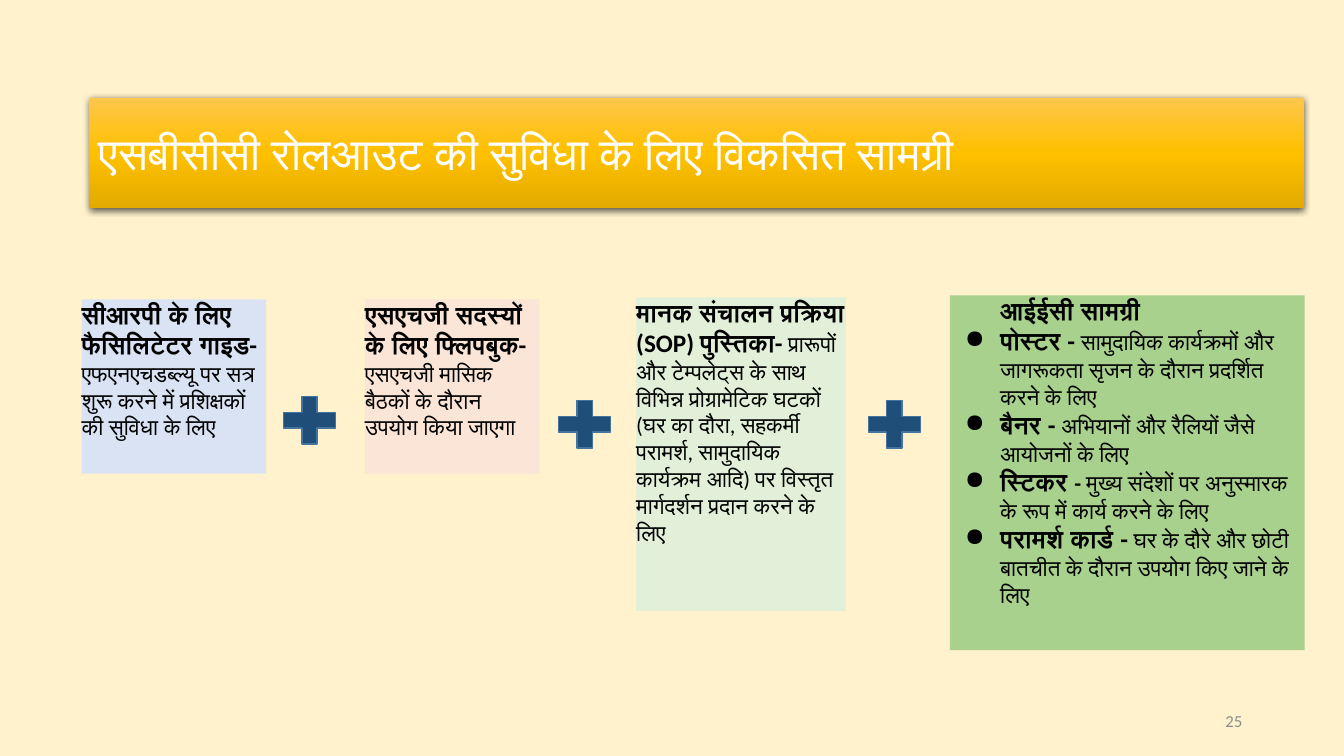
import copy
from dataclasses import dataclass

import lxml.etree
import pptx
import pptx.dml.color
import pptx.enum.shapes
import pptx.enum.text
import pptx.oxml.ns
import pptx.util

Inches = pptx.util.Inches
Pt = pptx.util.Pt
qn = pptx.oxml.ns.qn
MSO_SHAPE = pptx.enum.shapes.MSO_SHAPE
MSO_ANCHOR = pptx.enum.text.MSO_ANCHOR
PP_ALIGN = pptx.enum.text.PP_ALIGN

COLORS = {
    "background": "FFF2CC",
    "black": "000000",
    "white": "FFFFFF",
    "page_number": "8C8C8C",
    "guide": "DAE3F3",
    "flipbook": "FBE5D6",
    "sop": "E2F0D9",
    "iec": "A9D18E",
    "plus": "1F4E79",
    "plus_line": "43739E",
}
BANNER_STOPS = [(0, "FFC64B"), (0.5, "FFC000"), (1, "E3AB00")]


@dataclass
class Item:
    """A bold lead, an optional smaller bold mark, and the plain wording."""
    lead: str
    body: str = ""
    mark: str = ""
    indent: float = 0
    bullet: bool = False


@dataclass
class Card:
    left: float
    top: float
    width: float
    height: float
    color: str
    items: list[Item]


@dataclass
class Plus:
    left: float
    top: float


CARDS = [
    Card(0.81, 2.97, 1.83, 1.73, "guide", [
        Item("सीआरपी के लिए फैसिलिटेटर गाइड- ",
             "एफएनएचडब्ल्यू पर सत्र शुरू करने में प्रशिक्षकों की सुविधा के लिए"),
    ]),
    Card(3.62, 2.97, 1.73, 1.73, "flipbook", [
        Item("एसएचजी सदस्यों के लिए फ्लिपबुक- ",
             "एसएचजी मासिक बैठकों के दौरान उपयोग किया जाएगा"),
    ]),
    Card(6.31, 2.95, 2.08, 3.11, "sop", [
        Item("मानक संचालन प्रक्रिया (SOP) पुस्तिका- ",
             "प्रारूपों और टेम्पलेट्स के साथ विभिन्न प्रोग्रामेटिक घटकों "
             "(घर का दौरा, सहकर्मी परामर्श, सामुदायिक कार्यक्रम आदि) "
             "पर विस्तृत मार्गदर्शन प्रदान करने के लिए"),
    ]),
    Card(9.42, 2.93, 3.52, 3.52, "iec", [
        Item("आईईसी सामग्री", indent=0.5),
        Item("पोस्टर - ",
             "सामुदायिक कार्यक्रमों और जागरूकता सृजन के दौरान प्रदर्शित करने के लिए",
             indent=0.5, bullet=True),
        Item("बैनर - ", "अभियानों और रैलियों जैसे आयोजनों के लिए",
             indent=0.5, bullet=True),
        Item("स्टिकर ", "मुख्य संदेशों पर अनुस्मारक के रूप में कार्य करने के लिए",
             mark="- ", indent=0.5, bullet=True),
        Item("परामर्श कार्ड - ",
             "घर के दौरे और छोटी बातचीत के दौरान उपयोग किए जाने के लिए",
             indent=0.5, bullet=True),
    ]),
]
PLUSES = [Plus(2.72, 3.85), Plus(5.45, 3.89), Plus(8.52, 3.89)]


def rgb(value: str) -> pptx.dml.color.RGBColor:
    return pptx.dml.color.RGBColor.from_string(value)


def add_run(p, text: str, *, size: float, color: str = "black", bold: bool = False) -> None:
    r = p.add_run()
    r.text = text
    r.font.name = "Calibri"
    r.font.size = Pt(size)
    r.font.bold = bold
    r.font.color.rgb = rgb(COLORS[color])


def add_shape(s, kind, left: float, top: float, width: float, height: float):
    """Add a preset shape without line or shadow."""
    sp = s.shapes.add_shape(kind, Inches(left), Inches(top), Inches(width), Inches(height))
    sp.shadow.inherit = False
    sp.line.fill.background()
    return sp


def set_indent(p, item: Item) -> None:
    p_pr = p._p.get_or_add_pPr()
    p_pr.set("marL", str(Inches(item.indent)))
    p_pr.set("indent", str(Inches(-0.35 if item.bullet else 0)))
    if item.bullet:
        lxml.etree.SubElement(p_pr, qn("a:buChar")).set("char", "●")


def add_card(s, card: Card) -> None:
    sp = add_shape(s, MSO_SHAPE.RECTANGLE, card.left, card.top, card.width, card.height)
    sp.fill.solid()
    sp.fill.fore_color.rgb = rgb(COLORS[card.color])
    tf = sp.text_frame
    tf.word_wrap = True
    tf.vertical_anchor = MSO_ANCHOR.TOP
    tf.margin_left = tf.margin_right = tf.margin_top = 0
    tf.margin_bottom = Inches(0.05)
    for i, item in enumerate(card.items):
        p = tf.add_paragraph() if i else tf.paragraphs[0]
        p.alignment = PP_ALIGN.LEFT
        set_indent(p, item)
        add_run(p, item.lead, size=18, bold=True)
        if item.mark:
            add_run(p, item.mark, size=16, bold=True)
        if item.body:
            add_run(p, item.body, size=16)


def add_plus(s, plus: Plus) -> None:
    sp = add_shape(s, MSO_SHAPE.MATH_PLUS, plus.left, plus.top, 0.7, 0.64)
    sp.fill.solid()
    sp.fill.fore_color.rgb = rgb(COLORS["plus"])
    sp.line.color.rgb = rgb(COLORS["plus_line"])
    sp.line.width = Pt(1)


def add_drop_shadow(sp) -> None:
    effects = sp._element.spPr.find(qn("a:effectLst"))
    shadow = lxml.etree.SubElement(effects, qn("a:outerShdw"))
    for name, value in {"blurRad": Pt(4.5), "dist": Pt(1.5), "dir": 5400000,
                        "algn": "ctr", "rotWithShape": 0}.items():
        shadow.set(name, str(value))
    color = lxml.etree.SubElement(shadow, qn("a:srgbClr"))
    color.set("val", COLORS["black"])
    lxml.etree.SubElement(color, qn("a:alpha")).set("val", "63000")


def add_banner(s, title: str) -> None:
    sp = add_shape(s, MSO_SHAPE.RECTANGLE, 0.88, 0.97, 12.05, 1.09)
    sp.fill.gradient()
    sp.fill.gradient_angle = 270
    stops = sp._element.spPr.find(qn("a:gradFill")).find(qn("a:gsLst"))
    stops.append(copy.deepcopy(stops[0]))
    for stop, (position, color) in zip(sp.fill.gradient_stops, BANNER_STOPS):
        stop.position = position
        stop.color.rgb = rgb(color)
    add_drop_shadow(sp)
    tf = sp.text_frame
    tf.word_wrap = True
    tf.vertical_anchor = MSO_ANCHOR.MIDDLE
    p = tf.paragraphs[0]
    p.alignment = PP_ALIGN.LEFT
    add_run(p, title, size=32, color="white")


def add_page_number(s, number: str) -> None:
    sp = s.shapes.add_textbox(Inches(9.42), Inches(6.95), Inches(3), Inches(0.4))
    tf = sp.text_frame
    tf.word_wrap = True
    tf.vertical_anchor = MSO_ANCHOR.MIDDLE
    p = tf.paragraphs[0]
    p.alignment = PP_ALIGN.RIGHT
    add_run(p, number, size=12, color="page_number")


def main() -> None:
    prs = pptx.Presentation()
    prs.slide_width = Inches(13.33)
    prs.slide_height = Inches(7.5)
    s = prs.slides.add_slide(prs.slide_layouts[6])
    s.background.fill.solid()
    s.background.fill.fore_color.rgb = rgb(COLORS["background"])
    add_page_number(s, "25")
    for card in CARDS:
        add_card(s, card)
    for plus in PLUSES:
        add_plus(s, plus)
    add_banner(s, "एसबीसीसी रोलआउट की सुविधा के लिए विकसित सामग्री")
    prs.save("out.pptx")


if __name__ == "__main__":
    main()
